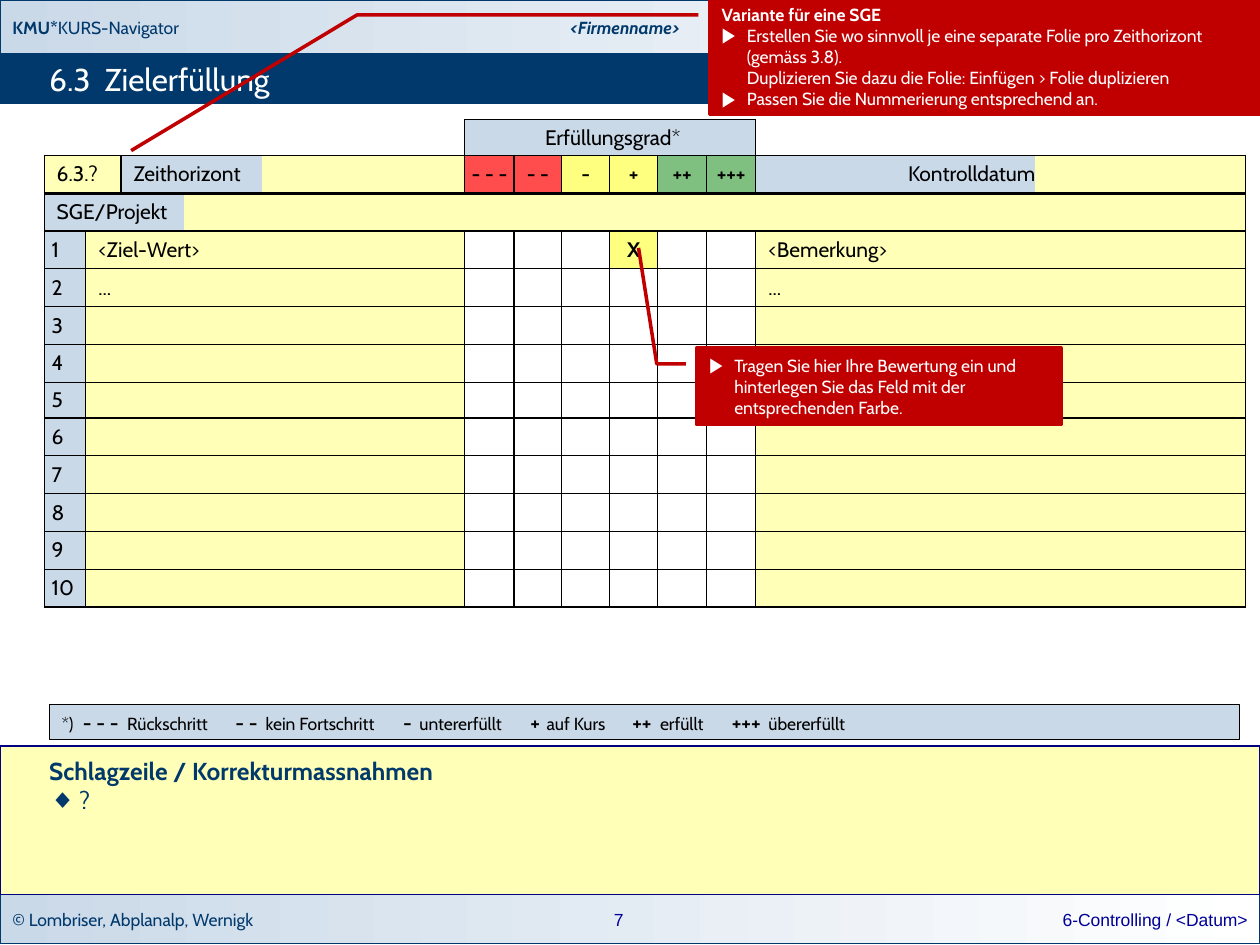
from dataclasses import dataclass
from lxml.etree import SubElement as Sub
from pptx import Presentation
from pptx.dml.color import RGBColor as RGB
from pptx.enum.shapes import MSO_SHAPE as Kind
from pptx.enum.text import MSO_ANCHOR as Anchor, PP_ALIGN as Align
from pptx.oxml.ns import qn
from pptx.util import Inches, Pt


@dataclass(frozen=True)
class Theme:
    navy: str = "01396C"
    pale: str = "CAD9E8"
    cream: str = "FFFFB7"
    alert: str = "C00000"
    white: str = "FFFFFF"
    black: str = "000000"
    link: str = "000099"
    edge: str = "000080"
    red: str = "FF0000"
    yellow: str = "FFFF00"
    green: str = "008000"
    face: str = "Cabin"
    plain: str = "Arial"
    small: int = 10
    body: int = 12
    head: int = 14
    title: int = 18


T = Theme()
COLS = [0.33, 0.28, 0.5, 0.62, 1.61, 0.39, 0.38, 0.38, 0.38, 0.39, 0.39,
        1.16, 1.06, 0.77, 0.9]
ROWS = [0.28] + [0.3] * 6 + [0.27] + [0.3] * 5
MARKS = [("- - -", T.red, 70, "Rückschritt"),
         ("- -", T.red, 70, "kein Fortschritt"),
         ("-", T.yellow, 50, "untererfüllt"),
         ("+", T.yellow, 50, "auf Kurs"),
         ("++", T.green, 50, "erfüllt"),
         ("+++", T.green, 50, "übererfüllt")]
STOPS = [0.17, 0.52, 1.38, 1.62, 2.71, 2.84, 3.72, 3.85, 4.53, 4.75, 5.32, 5.61]


def put(item, vals):
    for name, val in vals.items():
        setattr(item, name, val)


def style(run, size=T.small, color=T.black, face=T.face, bold=False, italic=False):
    put(run.font, dict(size=Pt(size), name=face, bold=bold, italic=italic))
    run.font.color.rgb = RGB.from_string(color)


def bullet(para, sign, size, indent, color):
    props = para._p.get_or_add_pPr()
    props.set("marL", str(Inches(indent)))
    props.set("indent", str(-Inches(indent)))
    Sub(Sub(props, qn("a:buClr")), qn("a:srgbClr"), val=color)
    Sub(props, qn("a:buSzPct"), val=str(size * 1000))
    Sub(props, qn("a:buFont"), typeface=T.plain)
    Sub(props, qn("a:buChar"), char=sign)


def tabs(para, stops):
    row = Sub(para._p.get_or_add_pPr(), qn("a:tabLst"))
    for stop in stops:
        Sub(row, qn("a:tab"), pos=str(Inches(stop)), algn="l")


def fill_para(para, runs, align=Align.LEFT, **base):
    para.alignment = align
    for text, look in runs:
        if text == "\v":
            para.add_line_break()
            continue
        run = para.add_run()
        run.text = text
        style(run, **{**base, **look})


def frame(shape, ins=(0.1, 0.04, 0.1, 0.04), anchor=Anchor.MIDDLE):
    names = ["margin_left", "margin_top", "margin_right", "margin_bottom"]
    put(shape.text_frame, dict(zip(names, map(Inches, ins)),
                               word_wrap=True, vertical_anchor=anchor))
    return shape.text_frame


def box(slide, at, fill, line, width=0.75, kind=Kind.RECTANGLE):
    shape = slide.shapes.add_shape(kind, *map(Inches, at))
    shape.shadow.inherit = False
    if fill:
        shape.fill.solid()
        shape.fill.fore_color.rgb = RGB.from_string(fill)
    else:
        shape.fill.gradient()
        shape.fill.gradient_angle = 0
        for stop, color, pos in zip(shape.fill.gradient_stops, (T.pale, T.white), (0, 1)):
            stop.color.rgb = RGB.from_string(color)
            stop.position = pos
    shape.line.color.rgb = RGB.from_string(line)
    shape.line.width = Pt(width)
    return shape


def bar(slide, at, runs):
    shape = box(slide, at, None, T.navy)
    fill_para(frame(shape).paragraphs[0], runs, color=T.navy)


def label(slide, at, text, align, **look):
    shape = slide.shapes.add_textbox(*map(Inches, at))
    fill_para(frame(shape).paragraphs[0], [(text, {})], align, **look)


def title(slide):
    shape = slide.shapes.title
    shape.element.getparent().append(shape.element)
    names = ["left", "top", "width", "height"]
    put(shape, dict(zip(names, map(Inches, (0.39, 0.43, 9.29, 0.39)))))
    para = frame(shape, (0, 0, 0, 0)).paragraphs[0]
    tabs(para, [0.44])
    fill_para(para, [("6.3\tZielerfüllung", {})], size=T.title, color=T.white)


def border(props, side, width):
    line = Sub(props, qn("a:ln" + side), w=str(Pt(width)))
    if width:
        Sub(Sub(line, qn("a:solidFill")), qn("a:srgbClr"), val=T.black)
    else:
        Sub(line, qn("a:noFill"))


def cell(table, row, col, text="", span=1, fill=None, alpha=100, sides="LRTB",
         pad=0.1, align=Align.LEFT, bold=False):
    spot = table.cell(row, col)
    if span > 1:
        spot.merge(table.cell(row, col + span - 1))
    put(spot, dict(margin_left=Inches(pad), margin_right=Inches(min(pad, 0.06)),
                   margin_top=Inches(0.04), margin_bottom=Inches(0.04),
                   vertical_anchor=Anchor.MIDDLE))
    props = spot._tc.get_or_add_tcPr()
    for side in "LRTB":
        wide = (row, side) in [(1, "B"), (2, "T")]
        border(props, side, (2.25 if wide else 0.75) if side in sides else 0)
    if fill:
        spot.fill.solid()
        spot.fill.fore_color.rgb = RGB.from_string(fill)
        if alpha < 100:
            tint = props.find(qn("a:solidFill"))[0]
            Sub(tint, qn("a:alpha"), val=str(alpha * 1000))
    else:
        spot.fill.background()
    para = spot.text_frame.paragraphs[0]
    if text:
        fill_para(para, [(text, {})], align, size=T.body, bold=bold)
    else:
        Sub(para._p, qn("a:endParaRPr"), sz=str(T.small * 100))


def grid(slide):
    item = slide.shapes.add_table(len(ROWS), len(COLS), Inches(0.35), Inches(0.95),
                                  Inches(9.54), Inches(3.86))
    table = item.table
    put(table, dict(first_row=False, horz_banding=False))
    for col, width in zip(table.columns, COLS):
        col.width = Inches(width)
    for row, height in zip(table.rows, ROWS):
        row.height = Inches(height)

    for col, span, sides in [(0, 2, "B"), (2, 2, "B"), (4, 1, "RB"), (11, 1, "LB"),
                             (12, 1, "B"), (13, 1, "B"), (14, 1, "B")]:
        cell(table, 0, col, span=span, sides=sides)
    cell(table, 0, 5, "Erfüllungsgrad*", 6, T.pale, align=Align.CENTER)

    cell(table, 1, 0, "6.3.?", 2, T.cream)
    cell(table, 1, 2, "Zeithorizont", 2, T.pale, sides="LTB")
    cell(table, 1, 4, fill=T.cream, sides="RTB")
    for col, (mark, color, alpha, _) in enumerate(MARKS, 5):
        cell(table, 1, col, mark, 1, color, alpha, pad=0, align=Align.CENTER, bold=True)
    cell(table, 1, 11, "Kontrolldatum", 2, T.pale, sides="LTB", pad=0, align=Align.RIGHT)
    cell(table, 1, 13, span=2, fill=T.cream, sides="RTB")
    cell(table, 2, 0, "SGE/Projekt", 3, T.pale, sides="LTB")
    cell(table, 2, 3, span=12, fill=T.cream, sides="RTB")

    notes = {1: ("<Ziel-Wert>", "<Bemerkung>"), 2: ("...", "...")}
    for num in range(1, 11):
        row = num + 2
        goal, note = notes.get(num, ("", ""))
        cell(table, row, 0, str(num), fill=T.pale, pad=0.06)
        cell(table, row, 1, goal, 4, T.cream)
        for col in range(5, 11):
            if (num, col) == (1, 8):
                cell(table, row, col, "X", 1, T.yellow, 50, pad=0.02,
                     align=Align.CENTER, bold=True)
            else:
                cell(table, row, col, fill=T.white)
        cell(table, row, 11, note, 4, T.cream)


def callout(slide, at, bends, items, lead=None):
    shape = box(slide, at, T.alert, T.alert, 2, Kind.LINE_CALLOUT_2)
    for num, bend in enumerate(bends):
        shape.adjustments[num] = bend
    text = frame(shape)
    para = text.paragraphs[0]
    if lead:
        fill_para(para, [(lead, {})], color=T.white, bold=True)
        para = text.add_paragraph()
    for num, runs in enumerate(items):
        para = text.add_paragraph() if num else para
        bullet(para, "▶", 120, 0.2, T.white)
        fill_para(para, [(run, {}) for run in runs], color=T.white)


def summary(slide):
    shape = box(slide, (0, 5.92, 10, 1.18), T.cream, T.edge)
    text = frame(shape, (0.39, 0.08, 0.2, 0.08), Anchor.TOP)
    look = dict(size=T.head, color=T.navy)
    fill_para(text.paragraphs[0], [("Schlagzeile / Korrekturmassnahmen", {})],
              bold=True, **look)
    para = text.add_paragraph()
    bullet(para, "◆", 110, 0.24, T.navy)
    fill_para(para, [("?", {})], **look)


def legend(slide):
    para = frame(box(slide, (0.39, 5.59, 9.45, 0.28), T.pale, T.black)).paragraphs[0]
    tabs(para, STOPS)
    runs = [("*)", {})]
    for mark, _, _, name in MARKS:
        runs += [("\t" + mark, dict(size=T.body, bold=True)), ("\t" + name, {})]
    fill_para(para, runs)


def main():
    deck = Presentation()
    put(deck, dict(slide_width=Inches(10), slide_height=Inches(7.5)))
    slide = deck.slides.add_slide(deck.slide_layouts[5])
    bar(slide, (0, 7.1, 10, 0.39), [("© Lombriser, Abplanalp, Wernigk", {})])
    bar(slide, (0, 0, 10, 0.43), [("KMU*", dict(bold=True)), ("KURS-Navigator", {})])
    box(slide, (0, 0.43, 10, 0.39), T.navy, T.navy)
    label(slide, (3.19, 0, 3.54, 0.44), "<Firmenname>", Align.CENTER,
          color=T.navy, bold=True, italic=True)
    foot = dict(color=T.link, face=T.plain)
    label(slide, (6.83, 7.1, 3.17, 0.4), "6-Controlling / <Datum>", Align.RIGHT, **foot)
    label(slide, (4.67, 7.1, 0.48, 0.39), "7", Align.CENTER, **foot)
    title(slide)
    grid(slide)
    callout(slide, (5.63, -0.01, 4.37, 0.92), (0.14, -0.02, 0.14, -0.64, 1.31, -1.05),
            [["Erstellen Sie wo sinnvoll je eine separate Folie pro Zeithorizont (gemäss 3.8).",
              "\v", "Duplizieren Sie dazu die Folie: Einfügen > Folie duplizieren"],
             ["Passen Sie die Nummerierung entsprechend an."]], "Variante für eine SGE")
    callout(slide, (5.53, 2.76, 2.89, 0.61), (0.21, -0.03, 0.21, -0.11, -1.3, -0.16),
            [["Tragen Sie hier Ihre Bewertung ein und hinterlegen Sie das Feld "
              "mit der entsprechenden Farbe."]])
    summary(slide)
    legend(slide)
    deck.save("out.pptx")


if __name__ == "__main__":
    main()
